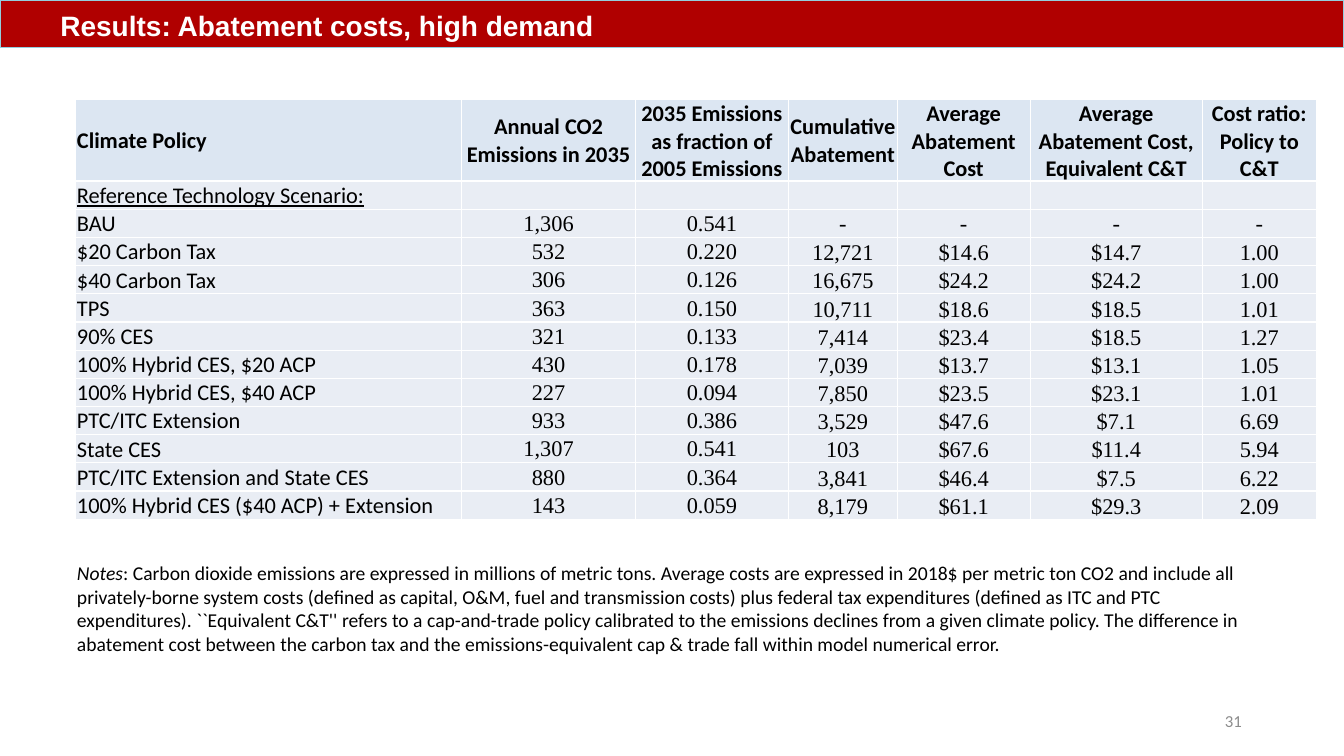
from dataclasses import dataclass

from lxml.etree import SubElement
from pptx import Presentation
from pptx.dml.color import RGBColor as Color
from pptx.enum.text import MSO_ANCHOR as Anchor, MSO_AUTO_SIZE as AutoSize, PP_ALIGN as Align
from pptx.oxml.ns import qn
from pptx.util import Cm, Pt


@dataclass(frozen=True)
class Theme:
    bar: str = "B00000"
    bar_line: str = "93CDDD"
    white: str = "FFFFFF"
    ink: str = "000000"
    muted: str = "8C8C8C"
    header: str = "DCE6F2"
    body: str = "E9EDF4"
    title_font: str = "Arial"
    text_font: str = "Calibri"
    number_font: str = "Times New Roman"
    title_size: int = 20
    table_size: int = 16
    remark_size: int = 14
    number_size: int = 12


theme = Theme()


def write(frame, text, size, font=theme.text_font, color=theme.ink, align=Align.LEFT,
          bold=False, italic=False, underline=False):
    para = frame.paragraphs[0]
    para.alignment = align
    if not text:
        para._p.get_or_add_endParaRPr().set("sz", str(size * 100))
        return
    span = para.add_run()
    span.text = text
    span.font.size = Pt(size)
    span.font.name = font
    span.font.color.rgb = Color.from_string(color)
    span.font.bold = bold
    span.font.italic = italic
    span.font.underline = underline


def style_cell(cell, fill, anchor):
    cell.margin_left = cell.margin_right = cell.margin_top = Cm(0.03)
    cell.margin_bottom = Cm(0)
    cell.vertical_anchor = anchor
    properties = cell._tc.get_or_add_tcPr()
    for side in ("lnL", "lnR", "lnT", "lnB"):
        border = SubElement(properties, qn(f"a:{side}"), w=str(Pt(1)))
        SubElement(SubElement(border, qn("a:solidFill")), qn("a:srgbClr"), val=theme.white)
    cell.fill.solid()
    cell.fill.fore_color.rgb = Color.from_string(fill)


deck = Presentation()
deck.slide_width = Cm(33.87)
deck.slide_height = Cm(19.05)
page = deck.slides.add_slide(deck.slide_layouts[5])

title = page.shapes.title
title.left, title.top, title.width, title.height = Cm(0), Cm(0), Cm(33.87), Cm(1.19)
title.fill.solid()
title.fill.fore_color.rgb = Color.from_string(theme.bar)
title.line.color.rgb = Color.from_string(theme.bar_line)
title.line.width = Pt(0)
title.text_frame.auto_size = AutoSize.NONE
title.text_frame.vertical_anchor = Anchor.BOTTOM
title.text_frame.margin_left = Cm(1.52)
write(title.text_frame, "Results: Abatement costs, high demand", theme.title_size,
      font=theme.title_font, color=theme.white, bold=True)

number_box = page.shapes.add_textbox(Cm(23.93), Cm(17.65), Cm(7.62), Cm(1.02))
number_box.text_frame.word_wrap = True
number_box.text_frame.vertical_anchor = Anchor.MIDDLE
write(number_box.text_frame, "31", theme.number_size, color=theme.muted, align=Align.RIGHT)

remarks = page.shapes.add_table(1, 1, Cm(1.91), Cm(14.12), Cm(30.23), Cm(2.21)).table
remarks.first_row = remarks.horz_banding = False
remark_cell = remarks.cell(0, 0)
style_cell(remark_cell, theme.white, Anchor.TOP)
write(remark_cell.text_frame, "Notes", theme.remark_size, italic=True)
write(remark_cell.text_frame,
      ": Carbon dioxide emissions are expressed in millions of metric tons. Average costs are "
      "expressed in 2018$ per metric ton CO2 and include all privately-borne system costs "
      "(defined as capital, O&M, fuel and transmission costs) plus federal tax expenditures "
      "(defined as ITC and PTC expenditures). ``Equivalent C&T'' refers to a cap-and-trade "
      "policy calibrated to the emissions declines from a given climate policy. The difference "
      "in abatement cost between the carbon tax and the emissions-equivalent cap & trade fall "
      "within model numerical error.", theme.remark_size)

headings = ["Climate Policy", "Annual CO2 Emissions in 2035",
            "2035 Emissions as fraction of 2005 Emissions", "Cumulative Abatement",
            "Average Abatement Cost", "Average Abatement Cost, Equivalent C&T",
            "Cost ratio: Policy to C&T"]
section = "Reference Technology Scenario:"
policies = [
    ["BAU", "1,306", "0.541", "-", "-", "-", "-"],
    ["$20 Carbon Tax", "532", "0.220", "12,721", "$14.6", "$14.7", "1.00"],
    ["$40 Carbon Tax", "306", "0.126", "16,675", "$24.2", "$24.2", "1.00"],
    ["TPS", "363", "0.150", "10,711", "$18.6", "$18.5", "1.01"],
    ["90% CES", "321", "0.133", "7,414", "$23.4", "$18.5", "1.27"],
    ["100% Hybrid CES, $20 ACP", "430", "0.178", "7,039", "$13.7", "$13.1", "1.05"],
    ["100% Hybrid CES, $40 ACP", "227", "0.094", "7,850", "$23.5", "$23.1", "1.01"],
    ["PTC/ITC Extension", "933", "0.386", "3,529", "$47.6", "$7.1", "6.69"],
    ["State CES", "1,307", "0.541", "103", "$67.6", "$11.4", "5.94"],
    ["PTC/ITC Extension and State CES", "880", "0.364", "3,841", "$46.4", "$7.5", "6.22"],
    ["100% Hybrid CES ($40 ACP) + Extension", "143", "0.059", "8,179", "$61.1", "$29.3", "2.09"],
]
rows = [headings, [section] + [""] * 6] + policies
widths = [9.73, 4.37, 3.86, 2.74, 3.35, 4.34, 2.87]
header_height, row_height = 2.06, 0.71

costs = page.shapes.add_table(len(rows), len(widths), Cm(1.91), Cm(2.5), Cm(sum(widths)),
                              Cm(header_height + row_height * (len(rows) - 1))).table
costs.horz_banding = False
for column, width in zip(costs.columns, widths):
    column.width = Cm(width)

for row_index, row in enumerate(rows):
    is_header = row_index == 0
    costs.rows[row_index].height = Cm(header_height if is_header else row_height)
    for column_index, text in enumerate(row):
        is_label = column_index == 0
        sits_low = row_index > 2 and column_index not in (1, 2)
        cell = costs.cell(row_index, column_index)
        style_cell(cell, theme.header if is_header else theme.body,
                   Anchor.BOTTOM if sits_low else Anchor.MIDDLE)
        write(cell.text_frame, text, theme.table_size,
              font=theme.text_font if is_header or is_label else theme.number_font,
              align=Align.LEFT if is_label else Align.CENTER,
              bold=is_header, underline=text == section)

deck.save("out.pptx")
